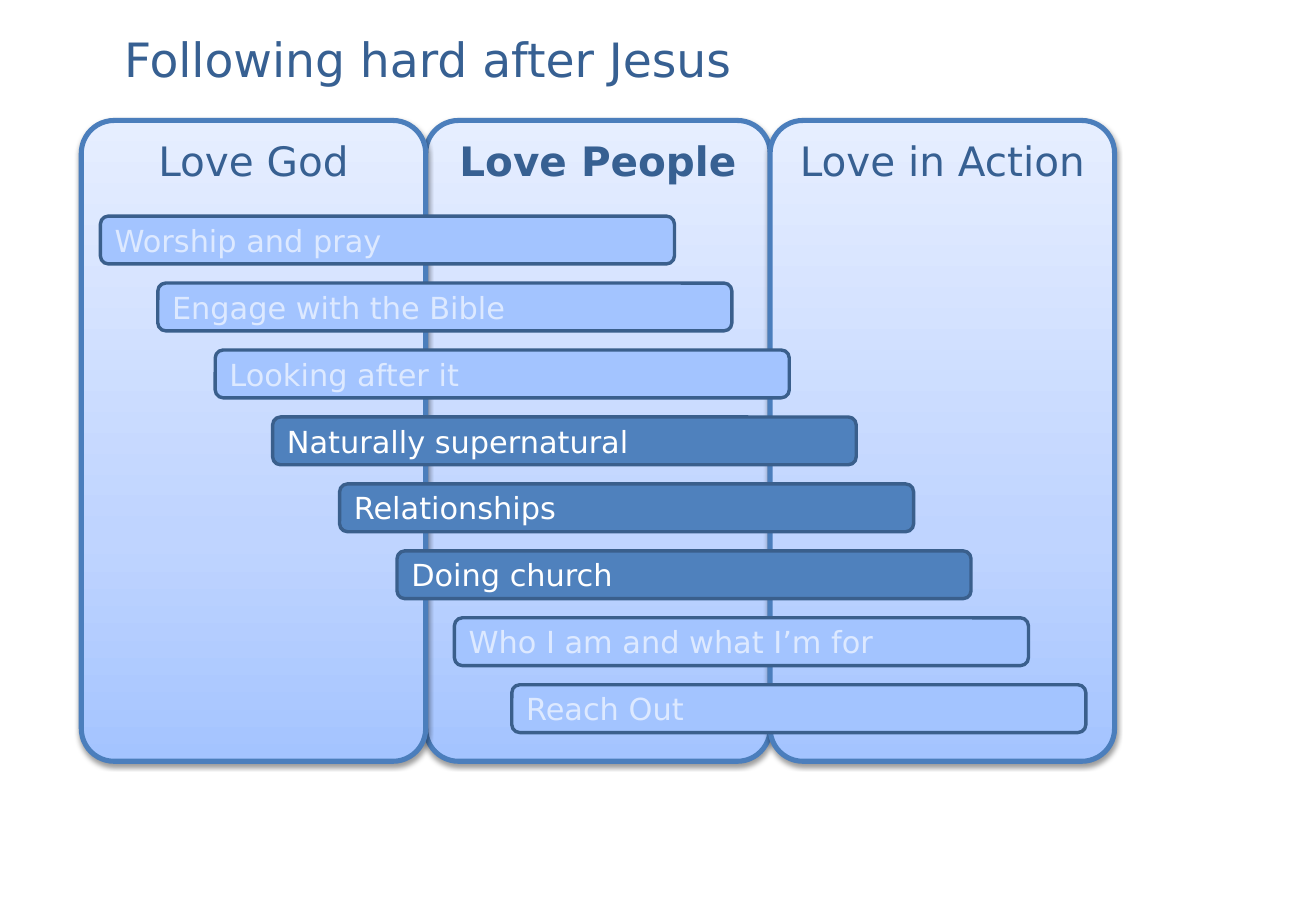
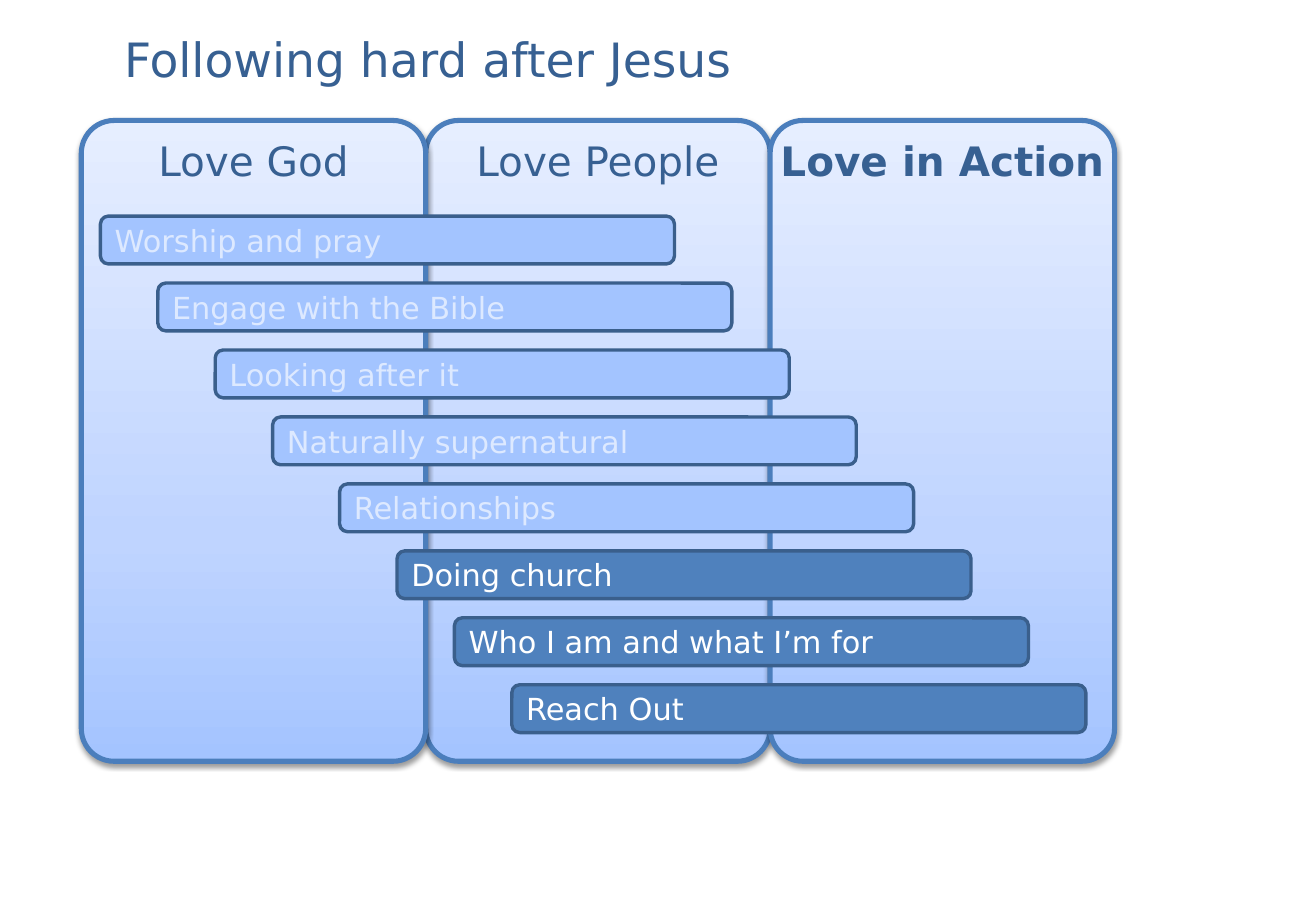
from pptx import Presentation
from pptx.dml.color import RGBColor
from pptx.enum.shapes import MSO_SHAPE as SHAPE
from pptx.enum.text import MSO_ANCHOR as ANCHOR, MSO_AUTO_SIZE as AUTO, PP_ALIGN as ALIGN
from pptx.oxml import parse_xml
from pptx.oxml.ns import nsdecls
from pptx.util import Cm, Pt

FONT = "DejaVu Sans"
HEADING = RGBColor(0x37, 0x60, 0x92)
PILLAR_LINE = RGBColor(0x4B, 0x7E, 0xBC)
BAR_LINE = RGBColor(0x3A, 0x5F, 0x8C)
ACTIVE_FILL = RGBColor(0x4F, 0x81, 0xBD)
ACTIVE_TEXT = RGBColor(0xFF, 0xFF, 0xFF)
MUTED_FILL = RGBColor(0xA3, 0xC4, 0xFF)
MUTED_TEXT = RGBColor(0xDD, 0xE9, 0xFF)
GRADIENT = [
    (0, RGBColor(0xA4, 0xC4, 0xFF)),
    (35, RGBColor(0xBF, 0xD4, 0xFF)),
    (100, RGBColor(0xE6, 0xEE, 0xFF)),
]

TITLE = "Following hard after Jesus"
PILLARS = ["Love God", "Love People", "Love in Action"]
PILLAR_ORDER = [1, 2, 0]
BARS = [
    "Worship and pray",
    "Engage with the Bible",
    "Looking after it",
    "Naturally supernatural",
    "Relationships",
    "Doing church",
    "Who I am and what I’m for",
    "Reach Out",
]
LONG_BAR = 3
SLIDES = [("Love People", range(3, 6)), ("Love in Action", range(5, 8))]


def write(tf, text, size, color, align, bold=False):
    """Put one formatted paragraph into a text frame."""
    p = tf.paragraphs[0]
    p.text, p.alignment = text, align
    p.font.name, p.font.size = FONT, Pt(size)
    p.font.color.rgb, p.font.bold = color, bold
    return p


def add_title(slide):
    """Place the slide title."""
    title = slide.shapes.title
    title.left, title.top, title.width, title.height = Cm(2.34), Cm(0.13), Cm(22.86), Cm(2.36)
    tf = title.text_frame
    tf.auto_size, tf.vertical_anchor = AUTO.NONE, ANCHOR.MIDDLE
    write(tf, TITLE, 28, HEADING, ALIGN.LEFT).line_spacing = 0.9


def add_rounded(slide, box, line, weight):
    """Add an outlined rounded rectangle without a shadow."""
    s = slide.shapes.add_shape(SHAPE.ROUNDED_RECTANGLE, *box)
    s.shadow.inherit = False
    s.line.color.rgb, s.line.width = line, Pt(weight)
    return s


def shade(s):
    """Give a shape the upward gradient and the soft shadow."""
    stops = "".join(
        f'<a:gs pos="{pos * 1000}"><a:srgbClr val="{color}"/></a:gs>' for pos, color in GRADIENT
    )
    spPr = s._element.spPr
    spPr.insert(2, parse_xml(
        f'<a:gradFill {nsdecls("a")} rotWithShape="1"><a:gsLst>{stops}</a:gsLst>'
        '<a:lin ang="16200000" scaled="0"/></a:gradFill>'
    ))
    spPr.find("{*}effectLst").append(parse_xml(
        f'<a:outerShdw {nsdecls("a")} blurRad="{Pt(3.1)}" dist="{Pt(1.6)}" dir="5400000" '
        'rotWithShape="0"><a:srgbClr val="000000"><a:alpha val="38000"/></a:srgbClr></a:outerShdw>'
    ))


def add_pillars(slide, left, top, width, height, strong):
    """Fill the box with equal pillars, the strong one in bold."""
    step = width // len(PILLARS)
    for i in PILLAR_ORDER:
        s = add_rounded(slide, (left + i * step, top, step, height), PILLAR_LINE, 3)
        s.adjustments[0] = 0.095
        shade(s)
        tf = s.text_frame
        tf.word_wrap, tf.vertical_anchor = False, ANCHOR.TOP
        write(tf, PILLARS[i], 24, HEADING, ALIGN.CENTER, PILLARS[i] == strong)


def add_bars(slide, left, top, active):
    """Step the bars down and right from the corner of the box."""
    for i, label in enumerate(BARS):
        extra = Cm(0.2)
        x = left + i * Cm(1.2) + (extra if i > LONG_BAR else 0)
        width = Cm(12) + (extra if i == LONG_BAR else 0)
        s = add_rounded(slide, (x, top + i * Cm(1.4), width, Cm(1)), BAR_LINE, 2)
        s.fill.solid()
        s.fill.fore_color.rgb = ACTIVE_FILL if i in active else MUTED_FILL
        s.text_frame.vertical_anchor = ANCHOR.MIDDLE
        write(s.text_frame, label, 18, ACTIVE_TEXT if i in active else MUTED_TEXT, ALIGN.LEFT)


def add_chart_slide(prs, strong, active):
    """Build one slide with title, pillars and bars."""
    slide = prs.slides.add_slide(prs.slide_layouts[5])
    add_title(slide)
    left, top = Cm(1.7), Cm(2.52)
    add_pillars(slide, left, top, Cm(21.6), Cm(13.4), strong)
    add_bars(slide, left + Cm(0.4), top + Cm(2), active)


def main():
    """Build and save the presentation."""
    prs = Presentation()
    prs.slide_width, prs.slide_height = Cm(27.51), Cm(19.05)
    for strong, active in SLIDES:
        add_chart_slide(prs, strong, active)
    prs.save("out.pptx")


if __name__ == "__main__":
    main()
